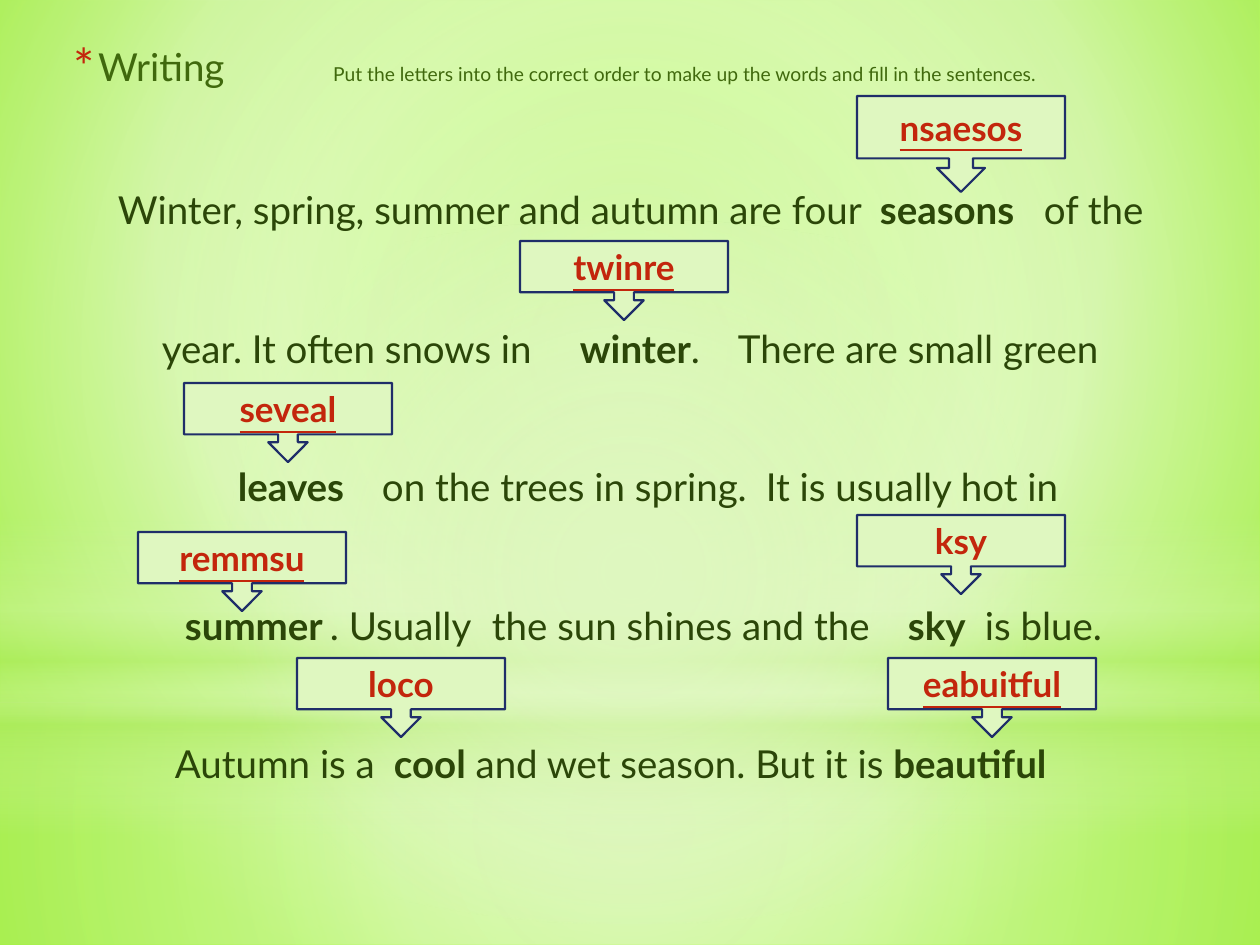
from lxml.etree import SubElement
from pptx import Presentation
from pptx.dml.color import RGBColor
from pptx.enum.shapes import MSO_SHAPE as Shape
from pptx.enum.text import MSO_ANCHOR as Anchor, PP_ALIGN as Align
from pptx.oxml import parse_xml
from pptx.oxml.ns import nsdecls, qn
from pptx.util import Emu, Pt

PX = 914400 // 126 + 914400 % 126 / 126
WIDTH, HEIGHT = 1260, 945
PALE, LEAF, RED, NAVY = "DFF7C0", "AEEB61", "C3260C", "1F2E69"
HEADING, BODY = "40690D", "2B4608"
CENTRE = (50, 50, 50, 50)

BACKGROUND = [(0, "ABFF45", 100), (60, "E5FFC7", 100), (100, "94FF13", 100)]
GLOWS = [
    (Shape.RECTANGLE, 703, 242, [(0, PALE, 91), (37, PALE, 76), (100, LEAF, 79)], CENTRE),
    (Shape.RECTANGLE, 0, 703, [(0, PALE, 89), (48, PALE, 62), (100, LEAF, 79)], CENTRE),
    (Shape.RECTANGLE, 519, 315, [(0, PALE, 0), (29, PALE, 30), (45, LEAF, 40),
                                 (55, PALE, 26), (65, LEAF, 60), (100, PALE, 0)], None),
    (Shape.OVAL, 220, 703, [(0, PALE, 100), (56, PALE, 0)], CENTRE),
]

SENTENCES = [
    [(118, "Winter, spring, summer and autumn are four", False),
     (880, "seasons", True), (1044, "of the", False)],
    [(162, "year. It often snows in", False), (580, "winter", True),
     (None, ".", False), (738, "There are small green", False)],
    [(238, "leaves", True), (382, "on the trees in spring.", False),
     (766, "It is usually hot in", False)],
    [(185, "summer", True), (330, ". Usually", False), (492, "the sun shines and the", False),
     (908, "sky", True), (985, "is blue.", False)],
    [(175, "Autumn is a", False), (394, "cool", True),
     (None, " and wet season. But it is ", False), (None, "beautiful", True)],
]

CALLOUTS = [
    ("nsaesos", 857, 96, 96, True),
    ("twinre", 520, 241, 79, True),
    ("seveal", 184, 383, 79, True),
    ("remmsu", 138, 532, 79, True),
    ("ksy", 857, 515, 79, False),
    ("loco", 297, 658, 79, False),
    ("eabuitful", 888, 658, 79, True),
]


def px(length):
    return Emu(round(length * PX))


def color(value):
    return RGBColor.from_string(value)


def write(paragraph, text, size=22, fill=BODY, bold=False, underline=False):
    run = paragraph.add_run()
    run.text = text
    font = run.font
    font.name, font.size, font.bold = "Lato", Pt(size), bold
    font.underline = underline
    font.color.rgb = color(fill)


def set_gradient(parent, stops, focus):
    stop_xml = "".join(
        f'<a:gs pos="{position * 1000}"><a:srgbClr val="{value}">'
        f'<a:alpha val="{alpha * 1000}"/></a:srgbClr></a:gs>'
        for position, value, alpha in stops)
    if focus:
        sides = " ".join(f'{side}="{value * 1000}"' for side, value in zip("ltrb", focus))
        direction = f'<a:path path="circle"><a:fillToRect {sides}/></a:path>'
    else:
        direction = '<a:lin ang="5400000" scaled="0"/>'
    gradient = parse_xml(f'<a:gradFill {nsdecls("a")} rotWithShape="1">'
                         f'<a:gsLst>{stop_xml}</a:gsLst>{direction}</a:gradFill>')
    parent.replace(parent.find(qn("a:solidFill")), gradient)


class Worksheet:
    def __init__(self, slide):
        self.slide = slide

    def background(self, stops, focus):
        self.slide.background.fill.solid()
        set_gradient(self.slide._element.find(".//" + qn("p:bgPr")), stops, focus)

    def shape(self, kind, left, top, width, height):
        shape = self.slide.shapes.add_shape(kind, px(left), px(top), px(width), px(height))
        shape.shadow.inherit = False
        shape.fill.solid()
        return shape

    def glow(self, kind, top, height, stops, focus):
        shape = self.shape(kind, 0, top, WIDTH, height)
        shape.line.fill.background()
        set_gradient(shape._element.spPr, stops, focus)

    def text_box(self, left, top, width, height):
        box = self.slide.shapes.add_textbox(px(left), px(top), px(width), px(height))
        frame = box.text_frame
        frame.word_wrap = True
        frame.margin_left = frame.margin_right = frame.margin_top = frame.margin_bottom = 0
        return frame

    def heading(self, text, left, top):
        paragraph = self.text_box(left, top, 220, 46).paragraphs[0]
        properties = paragraph._p.get_or_add_pPr()
        properties.set("marL", str(px(25)))
        properties.set("indent", str(-px(25)))
        bullet_color = SubElement(properties, qn("a:buClr"))
        SubElement(bullet_color, qn("a:srgbClr")).set("val", RED)
        SubElement(properties, qn("a:buSzPct")).set("val", "130000")
        SubElement(properties, qn("a:buFont")).set("typeface", "Lato")
        SubElement(properties, qn("a:buChar")).set("char", "*")
        write(paragraph, text, fill=HEADING)

    def instruction(self, text, left, top):
        paragraph = self.text_box(left, top, 760, 24).paragraphs[0]
        write(paragraph, text, size=11, fill=HEADING)

    def sentences(self, lines, left, top):
        frame = self.text_box(left, top, 1160, 600)
        for index, line in enumerate(lines):
            paragraph = frame.paragraphs[0] if index == 0 else frame.add_paragraph()
            tabs = SubElement(paragraph._p.get_or_add_pPr(), qn("a:tabLst"))
            for start, text, bold in line:
                if start is not None:
                    tab = SubElement(tabs, qn("a:tab"))
                    tab.set("pos", str(px(start - left)))
                    tab.set("algn", "l")
                    text = "\t" + text
                write(paragraph, text, bold=bold)
            if index:
                paragraph.space_before = Pt(52.8)

    def callout(self, text, left, top, height, underline):
        shape = self.shape(Shape.DOWN_ARROW_CALLOUT, left, top, 208, height)
        shape.fill.fore_color.rgb = color(PALE)
        shape.line.color.rgb = color(NAVY)
        shape.line.width = Pt(1.25)
        shape.text_frame.vertical_anchor = Anchor.MIDDLE
        paragraph = shape.text_frame.paragraphs[0]
        paragraph.alignment = Align.CENTER
        write(paragraph, text, size=20, fill=RED, bold=True, underline=underline)


def main():
    presentation = Presentation()
    presentation.slide_width, presentation.slide_height = px(WIDTH), px(HEIGHT)
    sheet = Worksheet(presentation.slides.add_slide(presentation.slide_layouts[6]))
    sheet.background(BACKGROUND, (20, 10, 20, 60))
    for glow in GLOWS:
        sheet.glow(*glow)
    sheet.heading("Writing", 73, 43)
    sheet.instruction("Put the letters into the correct order to make up the words "
                      "and fill in the sentences.", 333, 62)
    sheet.sentences(SENTENCES, 54, 186)
    for callout in CALLOUTS:
        sheet.callout(*callout)
    presentation.save("out.pptx")


if __name__ == "__main__":
    main()
